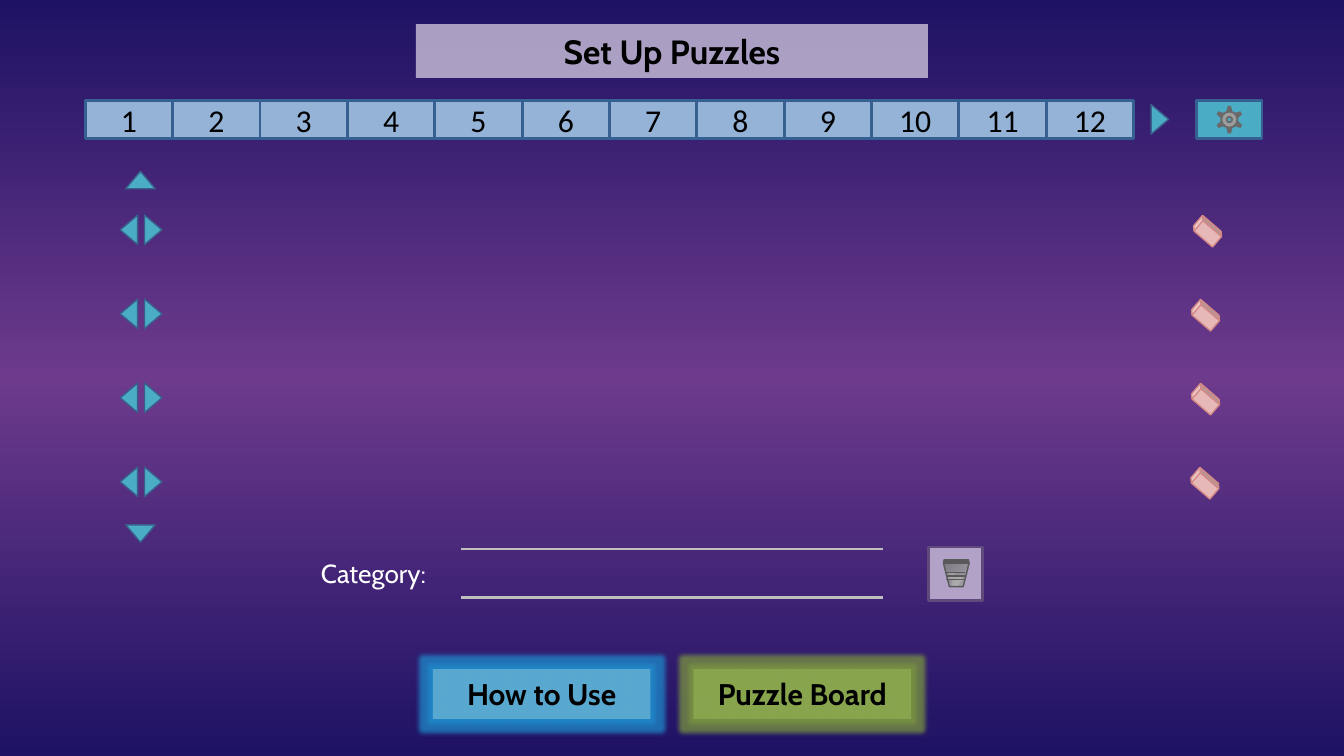
from copy import deepcopy
from dataclasses import dataclass
from math import cos, radians, sin

from lxml.etree import SubElement
from pptx import Presentation
from pptx.dml.color import RGBColor
from pptx.enum.shapes import MSO_CONNECTOR, MSO_SHAPE
from pptx.enum.text import MSO_ANCHOR, MSO_AUTO_SIZE, PP_ALIGN
from pptx.oxml.ns import qn
from pptx.util import Inches, Pt


@dataclass(frozen=True)
class Theme:
    night: str = "1E1264"
    dusk: str = "6D3A8C"
    title: str = "CCC1DA"
    cell: str = "95B3D7"
    edge: str = "376092"
    teal: str = "4BACC6"
    rim: str = "3A5F8C"
    pink: str = "E6B9B8"
    rose: str = "D48886"
    lilac: str = "B3A2C7"
    plum: str = "604A7B"
    dark: str = "595959"
    iron: str = "696969"
    steel: str = "9D9D9D"
    rule: str = "BFBFBF"
    lime: str = "9BBB59"
    moss: str = "7B9640"
    sky: str = "93CDDD"
    glow: str = "1F8BCB"
    black: str = "000000"
    white: str = "FFFFFF"
    head: int = 18
    digit: int = 17
    button: int = 16
    label: int = 14
    face: str = "Cabin"
    plain: str = "Calibri"


T = Theme()
WIDE = Inches(10)
HIGH = WIDE * 9 // 16
COLS = 100
UNIT = WIDE / COLS


def grid(*cells):
    return [round(cell * UNIT) for cell in cells]


def rgb(code):
    return RGBColor.from_string(code)


def alpha(color, share):
    SubElement(color, qn("a:alpha"), val=str(share * 1000))


def stroke(line, code, width):
    line.color.rgb = rgb(code)
    line.width = Pt(width)


def form(shapes, kind, box, fill, line=None, turn=0, adj=None, clear=None):
    shape = shapes.add_shape(kind, *grid(*box))
    shape.shadow.inherit = False
    shape.rotation = turn
    shape.fill.solid()
    shape.fill.fore_color.rgb = rgb(fill)
    if clear:
        alpha(shape.element.spPr.find(".//" + qn("a:srgbClr")), clear)
    if adj:
        shape.adjustments[0] = adj
    if line:
        stroke(shape.line, *line)
    else:
        shape.line.fill.background()
    return shape


def write(shape, text, size, code, align=PP_ALIGN.CENTER, frame=None, **font):
    body = shape.text_frame
    for name, value in {"word_wrap": True, "vertical_anchor": MSO_ANCHOR.TOP, **(frame or {})}.items():
        setattr(body, name, value)
    para = body.paragraphs[0]
    para.alignment = align
    run = para.add_run()
    run.text = text
    for name, value in {"name": T.face, "size": Pt(size), **font}.items():
        setattr(run.font, name, value)
    run.font.color.rgb = rgb(code)


def rule(shapes, left, right, top, code, width):
    line = shapes.add_connector(MSO_CONNECTOR.STRAIGHT, *grid(left, top, right, top))
    stroke(line.line, code, width)
    SubElement(line.element.spPr, qn("a:effectLst"))


def arrow(shapes, x, y, turn):
    form(shapes, MSO_SHAPE.ISOSCELES_TRIANGLE, (x - 1.1, y - 0.65, 2.2, 1.3),
         T.teal, (T.rim, 0.75), turn)


def backdrop(slide):
    fill = slide.background.fill
    fill.gradient()
    fill.gradient_angle = 90
    stops = slide.element.find(".//" + qn("a:gsLst"))
    stops.append(deepcopy(stops[-1]))
    for stop, place, code in zip(fill.gradient_stops, (0, 0.5, 1), (T.night, T.dusk, T.night)):
        stop.position = place
        stop.color.rgb = rgb(code)


def button(shapes, left, text, fill, halo):
    shape = form(shapes, MSO_SHAPE.RECTANGLE, (left, 49.8, 16.2, 3.7), fill, clear=50)
    glow = SubElement(shape.element.spPr.find(qn("a:effectLst")), qn("a:glow"), rad=str(Pt(5)))
    alpha(SubElement(glow, qn("a:srgbClr"), val=halo), 75)
    write(shape, text, T.button, T.black, bold=True,
          frame={"auto_size": MSO_AUTO_SIZE.SHAPE_TO_FIT_TEXT})


def gear(shapes):
    form(shapes, MSO_SHAPE.RECTANGLE, (89, 7.5, 4.9, 2.8), T.teal, (T.edge, 1.5))
    icon = shapes.add_group_shape().shapes
    x, y, reach, tooth = 91.47, 8.9, 0.77, 0.5
    for turn in range(0, 360, 60):
        left = x + reach * sin(radians(turn)) - tooth / 2
        top = y - reach * cos(radians(turn)) - tooth / 2
        form(icon, MSO_SHAPE.TRAPEZOID, (left, top, tooth, tooth), T.iron, turn=turn)
    form(icon, MSO_SHAPE.DONUT, (x - 0.6, y - 0.6, 1.2, 1.2), T.steel, (T.iron, 1), adj=0.335)


def bin_icon(shapes):
    form(shapes, MSO_SHAPE.RECTANGLE, (69.1, 40.7, 4, 4), T.lilac, (T.plum, 1.5))
    icon = shapes.add_group_shape().shapes
    for x, y in ((70.8, 43.1), (70.5, 42.6), (71, 42.8)):
        form(icon, MSO_SHAPE.CLOUD, (x, y, 0.6, 0.6), T.white)
    pail = form(icon, MSO_SHAPE.TRAPEZOID, (70.2, 41.9, 1.9, 1.75), T.steel, (T.dark, 0.75), 180)
    pail.fill.gradient()
    for stop, place, code in zip(pail.fill.gradient_stops, (0.1, 1), ("717171", "A6A6A6")):
        stop.position = place
        stop.color.rgb = rgb(code)
    fade = pail.element.spPr.find(qn("a:gradFill"))
    for color in fade.iter(qn("a:srgbClr")):
        alpha(color, 75)
    fade.remove(fade.find(qn("a:lin")))
    path = SubElement(fade, qn("a:path"), path="circle")
    SubElement(path, qn("a:fillToRect"), r="100000", b="100000")
    for y in (42.6, 42.85, 43.1):
        rule(icon, 70.4, 71.8, y, T.dark, 0.75)
    form(icon, MSO_SHAPE.TRAPEZOID, (70.2, 41.65, 1.9, 0.2), T.dark, (T.dark, 0.75))


def number(shapes):
    for i in range(12):
        cell = form(shapes, MSO_SHAPE.RECTANGLE, (6.35 + 6.5 * i, 7.5, 6.5, 2.8),
                    T.cell, (T.edge, 1.5))
        write(cell, str(i + 1), T.digit, T.black, name=T.plain,
              frame={"vertical_anchor": MSO_ANCHOR.MIDDLE})
    arrow(shapes, 86.3, 8.88, 90)


def rows(shapes):
    for i, left in enumerate((89.2, 89.05, 89.05, 89)):
        y = 17.1 + 6.25 * i
        arrow(shapes, 11.4, y, 90)
        arrow(shapes, 9.6, y, 270)
        form(shapes, MSO_SHAPE.CUBE, (left, y - 0.95, 1.3, 2.1), T.pink, (T.rose, 0.75),
             310.7, 0.216)
    arrow(shapes, 10.45, 13.4, 0)
    arrow(shapes, 10.45, 39.7, 180)


def entry(shapes):
    for y in (40.85, 44.47):
        rule(shapes, 34.3, 65.7, y, T.rule, 1.25)
    label = shapes.add_textbox(*grid(22.9, 41, 10, 3.4))
    write(label, "Category:", T.label, T.white, PP_ALIGN.LEFT,
          {"word_wrap": False, "auto_size": MSO_AUTO_SIZE.SHAPE_TO_FIT_TEXT})


def main():
    deck = Presentation()
    deck.slide_width, deck.slide_height = WIDE, HIGH
    slide = deck.slides.add_slide(deck.slide_layouts[6])
    shapes = slide.shapes
    backdrop(slide)
    title = form(shapes, MSO_SHAPE.RECTANGLE, (30.95, 1.8, 38.1, 4), T.title, clear=80)
    write(title, "Set Up Puzzles", T.head, T.black, bold=True,
          frame={"auto_size": MSO_AUTO_SIZE.SHAPE_TO_FIT_TEXT})
    rows(shapes)
    bin_icon(shapes)
    entry(shapes)
    gear(shapes)
    button(shapes, 51.6, "Puzzle Board", T.lime, T.moss)
    button(shapes, 32.2, "How to Use", T.sky, T.glow)
    number(shapes)
    deck.save("out.pptx")


if __name__ == "__main__":
    main()
